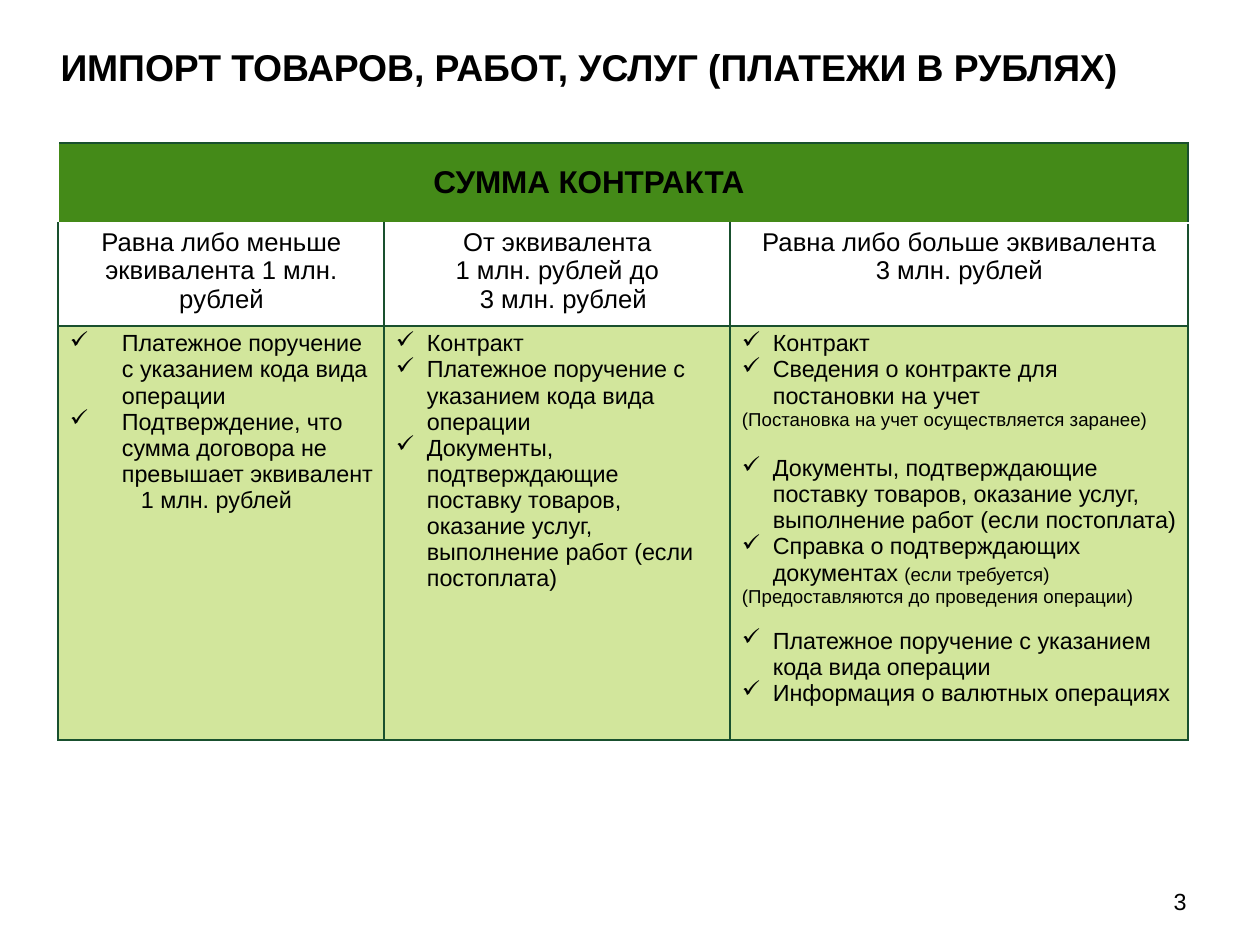
from lxml.etree import SubElement
from pptx import Presentation
from pptx.dml.color import RGBColor
from pptx.enum.text import MSO_ANCHOR, PP_ALIGN
from pptx.oxml.ns import qn
from pptx.util import Pt

PX = 914400 / 168
BLACK = RGBColor(0x00, 0x00, 0x00)
WHITE = RGBColor(0xFF, 0xFF, 0xFF)
GREEN = RGBColor(0x44, 0x8A, 0x18)
LIME = RGBColor(0xD2, 0xE6, 0x9C)
DARK = RGBColor(0x19, 0x50, 0x2E)

# Font values for each kind of text
FONTS = {
    "title": {"size": Pt(16), "bold": True},
    "head": {"size": Pt(13.5), "bold": True},
    "sum": {"size": Pt(11), "bold": False},
    "item": {"size": Pt(10), "bold": False},
    "note": {"size": Pt(8), "bold": False},
}


def px(num):
    return round(num * PX)


def write(frame, lines, align=PP_ALIGN.LEFT):
    """Each line: runs of (text, kind), left margin, bullet flag, space before."""
    frame.word_wrap = True
    for i, (runs, left, tick, gap) in enumerate(lines):
        para = frame.paragraphs[0] if i == 0 else frame.add_paragraph()
        para.alignment = align
        if gap:
            para.space_before = Pt(gap)
        props = para._p.get_or_add_pPr()
        props.set("marL", str(px(left)))
        props.set("indent", str(px(-left if tick else 0)))
        if tick:
            SubElement(props, qn("a:buChar"), char="✓")
        else:
            SubElement(props, qn("a:buNone"))
        for text, kind in runs:
            run = para.add_run()
            run.text = text
            run.font.name = "Arial"
            run.font.color.rgb = BLACK
            for key, val in FONTS[kind].items():
                setattr(run.font, key, val)


deck = Presentation()
deck.slide_width, deck.slide_height = px(1260), px(945)
slide = deck.slides.add_slide(deck.slide_layouts[6])

# Title and page number
boxes = [
    ((44, 29, 1159, 69), "ИМПОРТ ТОВАРОВ, РАБОТ, УСЛУГ (ПЛАТЕЖИ В РУБЛЯХ)",
     "title", MSO_ANCHOR.BOTTOM, PP_ALIGN.LEFT, 0.9),
    ((1074, 876, 129, 51), "3", "item", MSO_ANCHOR.MIDDLE, PP_ALIGN.RIGHT, 1.0),
]
for place, text, kind, anchor, align, pitch in boxes:
    frame = slide.shapes.add_textbox(*map(px, place)).text_frame
    frame.vertical_anchor = anchor
    write(frame, [([(text, kind)], 0, False, 0)], align)
    frame.paragraphs[0].line_spacing = pitch

# Table grid
cols, rows = (326, 346, 458), (80, 103, 414)
grid = slide.shapes.add_table(
    3, 3, px(58), px(143), px(sum(cols)), px(sum(rows))).table
grid.first_row = grid.horz_banding = False
for col, wide in zip(grid.columns, cols):
    col.width = px(wide)
for row, high in zip(grid.rows, rows):
    row.height = px(high)

# Cell borders, fills and margins
fills = (GREEN, WHITE, LIME)
for r in range(3):
    for c in range(3):
        cell = grid.cell(r, c)
        props = cell._tc.get_or_add_tcPr()
        edges = {
            "L": WHITE if r == 0 else DARK,
            "R": DARK,
            "T": WHITE if r == 1 else DARK,
            "B": WHITE if r == 0 else DARK,
        }
        for side, color in edges.items():
            line = SubElement(props, qn("a:ln" + side), w=str(Pt(0.75)))
            solid = SubElement(line, qn("a:solidFill"))
            SubElement(solid, qn("a:srgbClr"), val=str(color))
        cell.fill.solid()
        cell.fill.fore_color.rgb = fills[r]
        margins = {"margin_left": 12, "margin_right": 11,
                   "margin_top": 5, "margin_bottom": 5}
        for key, val in margins.items():
            setattr(cell, key, px(val))

# Header across all columns, set a little left of centre
head = grid.cell(0, 0)
head.merge(grid.cell(0, 2))
head.vertical_anchor = MSO_ANCHOR.MIDDLE
head.margin_left, head.margin_right = px(5), px(73)
write(head.text_frame, [([("СУММА КОНТРАКТА", "head")], 0, False, 0)],
      PP_ALIGN.CENTER)

# Contract sums: text and left margin of each line
sums = [
    [("Равна либо меньше эквивалента 1 млн. рублей", 0)],
    [("От эквивалента", 0), ("1 млн. рублей до", 0), ("3 млн. рублей", 12)],
    [("Равна либо больше эквивалента", 0), ("3 млн. рублей", 0)],
]
for c, lines in enumerate(sums):
    write(grid.cell(1, c).text_frame,
          [([(text, "sum")], left, False, 0) for text, left in lines],
          PP_ALIGN.CENTER)

# Required papers
order = "Платежное поручение с указанием кода вида операции"
proof = ("Документы, подтверждающие поставку товаров, оказание услуг, "
         "выполнение работ (если постоплата)")
papers = [
    [
        ([(order, "item")], 52, True, 0),
        ([("Подтверждение, что сумма договора не превышает эквивалент",
           "item")], 52, True, 0),
        ([("1 млн. рублей", "item")], 71, False, 0),
    ],
    [([(text, "item")], 31, True, 0) for text in ("Контракт", order, proof)],
    [
        ([("Контракт", "item")], 31, True, 0),
        ([("Сведения о контракте для постановки на учет", "item")],
         31, True, 0),
        ([("(Постановка на учет осуществляется заранее)", "note")],
         0, False, 0),
        ([(proof, "item")], 31, True, 11),
        ([("Справка о подтверждающих документах ", "item"),
          ("(если требуется)", "note")], 31, True, 0),
        ([("(Предоставляются до проведения операции)", "note")],
         0, False, 0),
        ([(order, "item")], 31, True, 9),
        ([("Информация о валютных операциях", "item")], 31, True, 0),
    ],
]
for c, lines in enumerate(papers):
    write(grid.cell(2, c).text_frame, lines)

deck.save("out.pptx")
